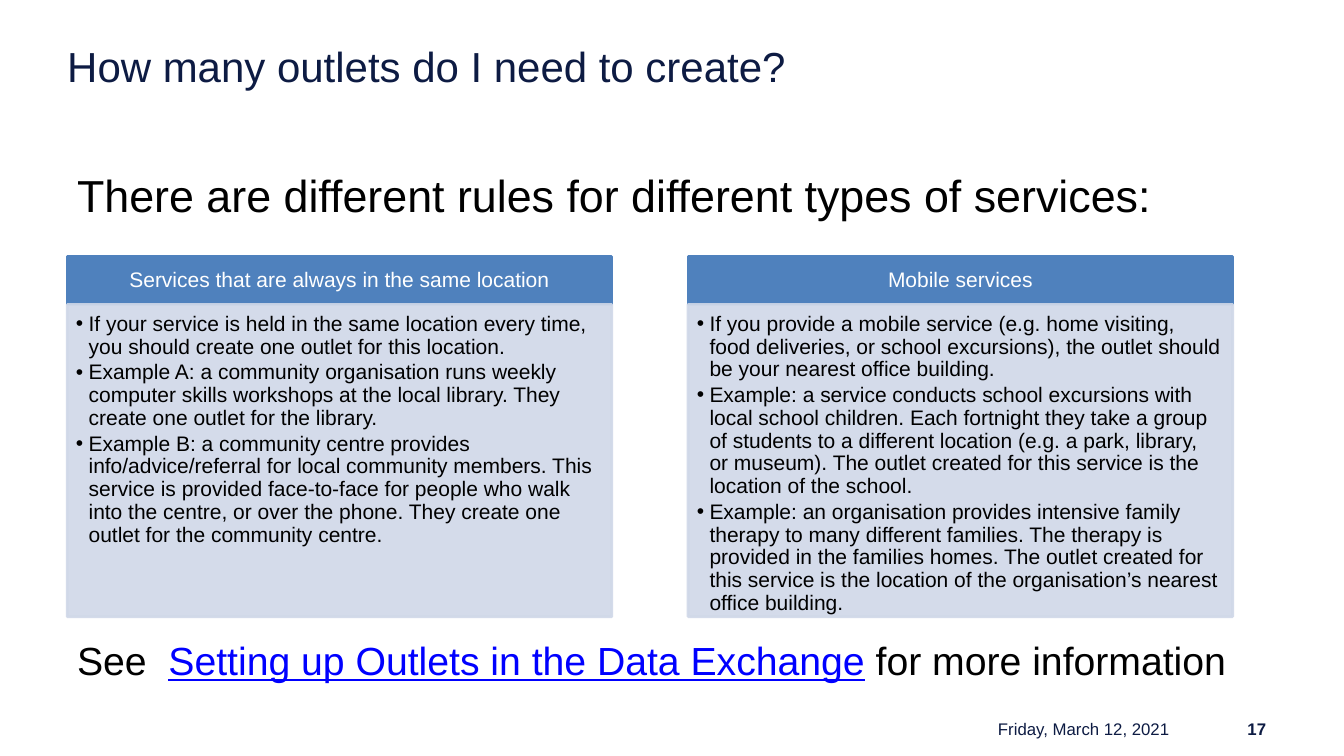
from lxml import etree
from pptx import Presentation
from pptx.dml.color import RGBColor
from pptx.enum.shapes import MSO_SHAPE
from pptx.enum.text import MSO_ANCHOR, MSO_AUTO_SIZE, PP_ALIGN
from pptx.oxml.ns import qn
from pptx.util import Pt

RECT = MSO_SHAPE.RECTANGLE
TOP, MIDDLE = MSO_ANCHOR.TOP, MSO_ANCHOR.MIDDLE
LEFT, CENTER, RIGHT = PP_ALIGN.LEFT, PP_ALIGN.CENTER, PP_ALIGN.RIGHT
NO_FIT = MSO_AUTO_SIZE.NONE

FONT = "Arial"
COLORS = {"navy": "0D1B43", "black": "000000", "white": "FFFFFF",
          "header": "4F81BD", "panel": "D0D8E8", "link": "0000FF"}

COLUMNS = [
    ("Services that are always in the same location", [
        "If your service is held in the same location every time, you should "
        "create one outlet for this location.",
        "Example A: a community organisation runs weekly computer skills "
        "workshops at the local library. They create one outlet for the library.",
        "Example B: a community centre provides info/advice/referral for local "
        "community members. This service is provided face-to-face for people "
        "who walk into the centre, or over the phone. They create one outlet "
        "for the community centre.",
    ]),
    ("Mobile services", [
        "If you provide a mobile service (e.g. home visiting, food deliveries, "
        "or school excursions), the outlet should be your nearest office building.",
        "Example: a service conducts school excursions with local school "
        "children. Each fortnight they take a group of students to a different "
        "location (e.g. a park, library, or museum). The outlet created for "
        "this service is the location of the school.",
        "Example: an organisation provides intensive family therapy to many "
        "different families. The therapy is provided in the families homes. "
        "The outlet created for this service is the location of the "
        "organisation’s nearest office building.",
    ]),
]


def rgb(name):
    return RGBColor.from_string(COLORS[name])


def format_runs(p, size, color, bold=False):
    for r in p.runs:
        r.font.name, r.font.size, r.font.bold = FONT, Pt(size), bold
        r.font.color.rgb = rgb(color)


def set_frame(tf, anchor, insets):
    tf.word_wrap, tf.auto_size, tf.vertical_anchor = True, NO_FIT, anchor
    (tf.margin_left, tf.margin_top,
     tf.margin_right, tf.margin_bottom) = [Pt(v) for v in insets]


def add_text(s, box, text, size, color, align=LEFT, anchor=TOP, bold=False):
    tf = s.shapes.add_textbox(*[Pt(v) for v in box]).text_frame
    set_frame(tf, anchor, (7.2, 3.6, 7.2, 3.6))
    p = tf.paragraphs[0]
    p.text, p.alignment = text, align
    format_runs(p, size, color, bold)
    return p


def add_title(s, box, text):
    title = s.shapes.title
    title.left, title.top, title.width, title.height = [Pt(v) for v in box]
    tf = title.text_frame
    tf.text = text
    set_frame(tf, TOP, (0, 0, 0, 0))
    tf.paragraphs[0].alignment = LEFT
    format_runs(tf.paragraphs[0], 30, "navy")


def add_panel(s, box, color, opacity=100):
    sp = s.shapes.add_shape(RECT, *[Pt(v) for v in box])
    sp.shadow.inherit = False
    sp.fill.solid()
    sp.fill.fore_color.rgb = sp.line.color.rgb = rgb(color)
    sp.line.width = Pt(2)
    if opacity < 100:
        for clr in sp.fill._xPr.iter(qn("a:srgbClr")):
            etree.SubElement(clr, qn("a:alpha"), val=str(opacity * 1000))
    return sp.text_frame


def add_bullet(p):
    pPr = p._p.get_or_add_pPr()
    pPr.set("marL", str(Pt(9)))
    pPr.set("indent", str(-Pt(9)))
    etree.SubElement(pPr, qn("a:buFont"), typeface=FONT)
    etree.SubElement(pPr, qn("a:buChar"), char="•")


def add_column(s, box, heading, points):
    left, top, width, height = box
    header_height = 34

    # Heading bar
    tf = add_panel(s, (left, top, width, header_height), "header")
    set_frame(tf, MIDDLE, (8.4, 4.8, 8.4, 4.8))
    p = tf.paragraphs[0]
    p.text, p.alignment, p.line_spacing = heading, CENTER, 0.9
    format_runs(p, 15, "white")

    # Bulleted rules
    tf = add_panel(s, (left, top + header_height, width, height - header_height),
                   "panel", 90)
    set_frame(tf, TOP, (6.3, 6.3, 8.4, 9.45))
    for i, point in enumerate(points):
        p = tf.add_paragraph() if i else tf.paragraphs[0]
        p.text, p.alignment = point, LEFT
        p.line_spacing, p.space_after = 0.9, Pt(2.25)
        add_bullet(p)
        format_runs(p, 15, "black")


def add_more_info(s, box):
    p = add_text(s, box, "See  ", 28, "black")
    for text in ("Setting up Outlets in the Data Exchange", " for more information"):
        p.add_run().text = text
    format_runs(p, 28, "black")
    link = p.runs[1].font
    link.color.rgb, link.underline = rgb("link"), True


def add_footer(s, top):
    add_text(s, (618.5, top, 224, 16.5), "Friday, March 12, 2021", 12, "navy",
             RIGHT, MIDDLE)
    add_text(s, (833, top, 78.5, 16.5), "17", 12, "navy", RIGHT, MIDDLE, True)


def build_outlets_slide(prs):
    s = prs.slides.add_slide(prs.slide_layouts[5])
    left, width = 48, 864
    add_title(s, (left, 29, width, 47.5), "How many outlets do I need to create?")
    add_text(s, (left, 116, width, 46),
             "There are different rules for different types of services:",
             32, "black")
    for i, (heading, points) in enumerate(COLUMNS):
        add_column(s, (left + i * 443.5, 183.5, 389, 257), heading, points)
    add_more_info(s, (left, 451, width, 40))
    add_footer(s, 512.5)


def main():
    prs = Presentation()
    prs.slide_width, prs.slide_height = Pt(960), Pt(540)
    build_outlets_slide(prs)
    prs.save("out.pptx")


if __name__ == "__main__":
    main()
